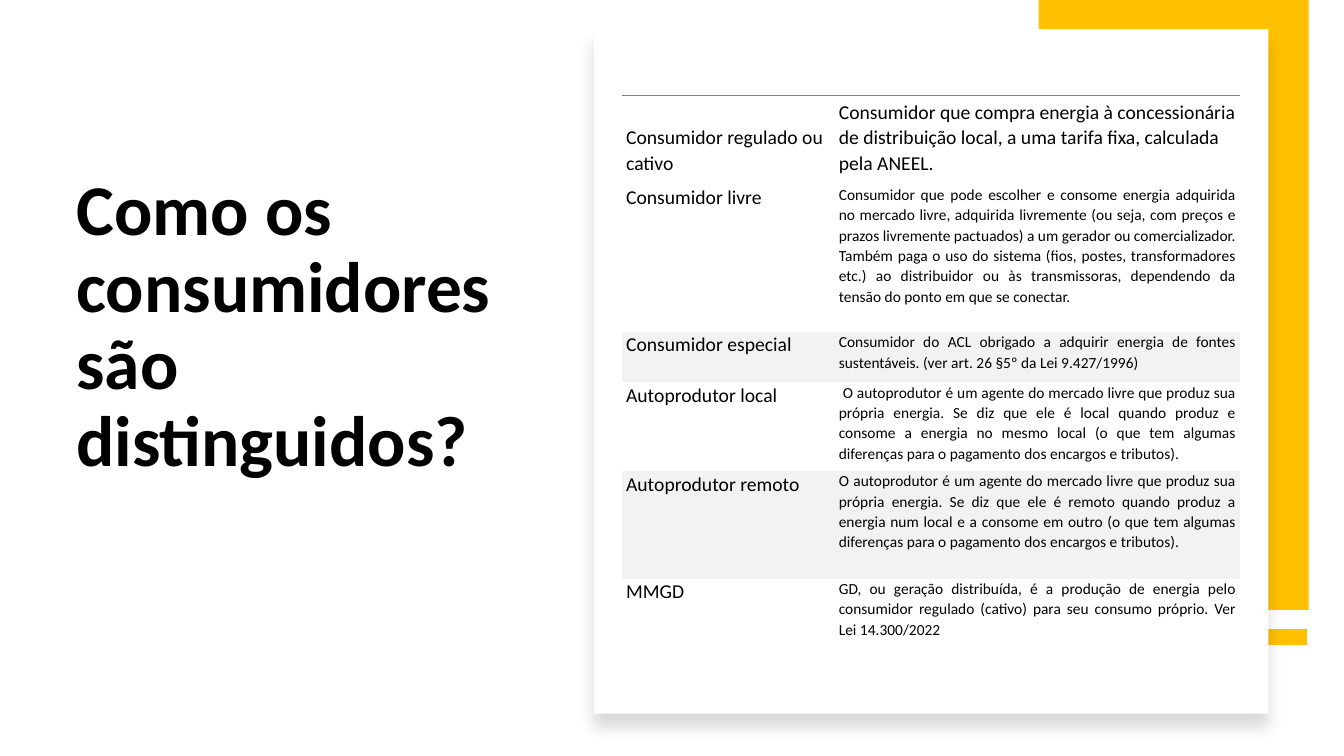
import pptx
import pptx.util
import pptx.dml.color
import pptx.enum.shapes
import pptx.enum.text
import pptx.oxml
import pptx.oxml.ns

Inches = pptx.util.Inches
Pt = pptx.util.Pt
ALIGN = pptx.enum.text.PP_ALIGN
ANCHOR = pptx.enum.text.MSO_ANCHOR

COLOURS = {"ink": "000000", "card": "FFFFFF", "accent": "FFC000",
           "band": "F2F2F2", "rule": "7F7F7F"}
FONT = "Calibri"
PLAIN_TABLE_STYLE = "{2D5ABB26-0587-4C30-8999-92F81FD0307C}"

COLUMN_WIDTHS = [2.11, 4.02]
# Consumer type, definition, row height
CONSUMERS = [
    ("Consumidor regulado ou cativo",
     "Consumidor que compra energia à concessionária de distribuição local, "
     "a uma tarifa fixa, calculada pela ANEEL.", 0.88),
    ("Consumidor livre",
     "Consumidor que pode escolher e consome energia adquirida no mercado livre, "
     "adquirida livremente (ou seja, com preços e prazos livremente pactuados) a um "
     "gerador ou comercializador. Também paga o uso do sistema (fios, postes, "
     "transformadores etc.) ao distribuidor ou às transmissoras, dependendo da "
     "tensão do ponto em que se conectar.", 1.46),
    ("Consumidor especial",
     "Consumidor do ACL obrigado a adquirir energia de fontes sustentáveis. "
     "(ver art. 26 §5º da Lei 9.427/1996)", 0.5),
    ("Autoprodutor local",
     " O autoprodutor é um agente do mercado livre que produz sua própria energia. "
     "Se diz que ele é local quando produz e consome a energia no mesmo local "
     "(o que tem algumas diferenças para o pagamento dos encargos e tributos).", 0.88),
    ("Autoprodutor remoto",
     "O autoprodutor é um agente do mercado livre que produz sua própria energia. "
     "Se diz que ele é remoto quando produz a energia num local e a consome em outro "
     "(o que tem algumas diferenças para o pagamento dos encargos e tributos).", 1.07),
    ("MMGD",
     "GD, ou geração distribuída, é a produção de energia pelo consumidor regulado "
     "(cativo) para seu consumo próprio. Ver Lei 14.300/2022", 0.69),
]
BANDED_ROWS = {2, 4}


def colour(name):
    return pptx.dml.color.RGBColor.from_string(COLOURS[name])


def xml(markup):
    namespace = pptx.oxml.ns.nsdecls("a")
    return pptx.oxml.parse_xml(markup.replace(" ", f" {namespace} ", 1))


def write(frame, text, size, bold=False, align=ALIGN.LEFT, spacing=1.0, after=0):
    frame.word_wrap = True
    para = frame.paragraphs[0]
    para.alignment = align
    para.line_spacing = spacing
    para.space_after = Pt(after)
    span = para.add_run()
    span.text = text
    span.font.name = FONT
    span.font.size = Pt(size)
    span.font.bold = bold
    span.font.color.rgb = colour("ink")


def add_title(page, text, left, top, width, height):
    box = page.shapes.add_textbox(Inches(left), Inches(top), Inches(width), Inches(height))
    box.text_frame.vertical_anchor = ANCHOR.BOTTOM
    write(box.text_frame, text, size=51, bold=True, spacing=0.9)


def add_panel(page, fill, left, top, width, height):
    panel = page.shapes.add_shape(pptx.enum.shapes.MSO_SHAPE.RECTANGLE, Inches(left),
                                  Inches(top), Inches(width), Inches(height))
    panel.shadow.inherit = False
    panel.fill.solid()
    panel.fill.fore_color.rgb = colour(fill)
    panel.line.fill.background()
    return panel


def add_soft_shadow(panel):
    effects = panel._element.spPr.find(pptx.oxml.ns.qn("a:effectLst"))
    effects.append(xml(
        f'<a:outerShdw blurRad="{Pt(11)}" dist="{Pt(10)}" dir="5400000" algn="t" '
        'rotWithShape="0"><a:srgbClr val="000000"><a:alpha val="15000"/></a:srgbClr>'
        '</a:outerShdw>'))


def add_bar(page, left, right, height, weight):
    bar = page.shapes.add_connector(pptx.enum.shapes.MSO_CONNECTOR.STRAIGHT, Inches(right),
                                    Inches(height), Inches(left), Inches(height))
    bar.line.color.rgb = colour("accent")
    bar.line.width = Pt(weight)
    bar._element.spPr.append(xml("<a:effectLst />"))


def add_top_rule(cell):
    cell._tc.get_or_add_tcPr().insert(0, xml(
        f'<a:lnT w="{Pt(0.5)}"><a:solidFill><a:srgbClr val="{COLOURS["rule"]}"/>'
        '</a:solidFill></a:lnT>'))


def fill_cell(cell, text, row, is_definition):
    is_first = row == 0
    cell.margin_left = cell.margin_right = Inches(0.04)
    cell.margin_top = 0
    cell.margin_bottom = Inches(0.09)
    cell.vertical_anchor = ANCHOR.BOTTOM if is_first else ANCHOR.TOP
    small = is_definition and not is_first
    write(cell.text_frame, text, size=11 if small else 14,
          align=ALIGN.JUSTIFY if small else ALIGN.LEFT, spacing=1.07, after=8)
    if row in BANDED_ROWS:
        cell.fill.solid()
        cell.fill.fore_color.rgb = colour("band")
    else:
        cell.fill.background()
    if is_first:
        add_top_rule(cell)


def add_consumer_table(page, left, top):
    height = sum(consumer[2] for consumer in CONSUMERS)
    table = page.shapes.add_table(len(CONSUMERS), len(COLUMN_WIDTHS), Inches(left), Inches(top),
                                  Inches(sum(COLUMN_WIDTHS)), Inches(height)).table
    table.first_row = table.horz_banding = False
    style = table._tbl.tblPr.find(pptx.oxml.ns.qn("a:tableStyleId"))
    style.text = PLAIN_TABLE_STYLE
    for column, width in zip(table.columns, COLUMN_WIDTHS):
        column.width = Inches(width)
    for row, (kind, definition, row_height) in enumerate(CONSUMERS):
        table.rows[row].height = Inches(row_height)
        fill_cell(table.cell(row, 0), kind, row, is_definition=False)
        fill_cell(table.cell(row, 1), definition, row, is_definition=True)


def main():
    deck = pptx.Presentation()
    deck.slide_width = Inches(13.33)
    deck.slide_height = Inches(7.5)
    page = deck.slides.add_slide(deck.slide_layouts[6])

    # Title
    add_title(page, "Como os consumidores são distinguidos?", 0.66, 0.74, 4.56, 4.09)

    # Yellow accents behind the card
    add_bar(page, left=10.3, right=12.96, height=6.32, weight=12)
    add_panel(page, "accent", 10.3, 0, 2.68, 6.05)

    # Card with the table of consumers
    add_soft_shadow(add_panel(page, "card", 5.89, 0.29, 6.69, 6.79))
    add_consumer_table(page, 6.17, 0.95)

    deck.save("out.pptx")


if __name__ == "__main__":
    main()
